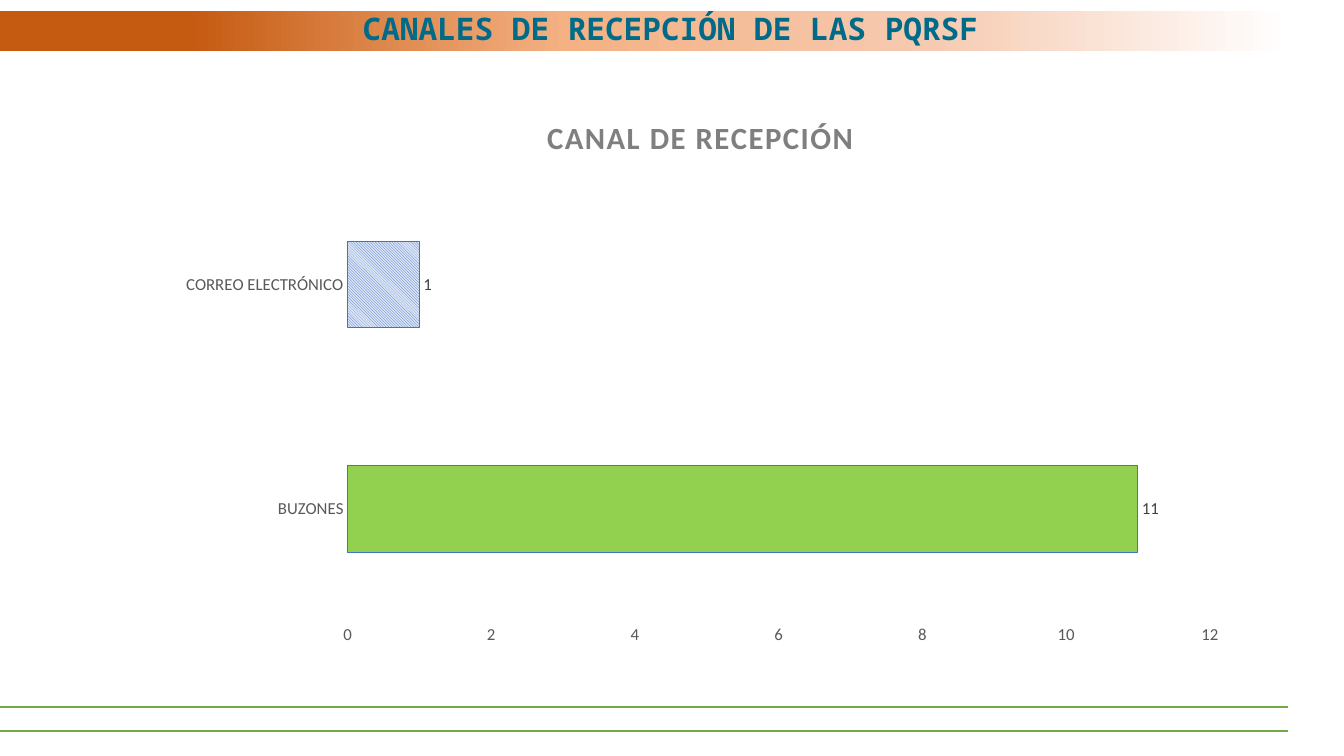
"""Build the slide on the reception channels of the PQRSF."""
from dataclasses import dataclass

from lxml.etree import SubElement
from pptx import Presentation
from pptx.chart.data import CategoryChartData
from pptx.dml.color import RGBColor
from pptx.enum.chart import XL_CHART_TYPE, XL_LABEL_POSITION, XL_TICK_MARK
from pptx.enum.dml import MSO_PATTERN
from pptx.enum.shapes import MSO_CONNECTOR, MSO_SHAPE
from pptx.enum.text import MSO_ANCHOR, PP_ALIGN
from pptx.oxml import parse_xml
from pptx.oxml.ns import nsdecls, qn
from pptx.util import Inches, Pt


@dataclass(frozen=True)
class Theme:
    heading_font: str = "Noto Sans Mono"
    chart_font: str = "Calibri"
    heading: str = "006B89"
    chart_title: str = "7F7F7F"
    axis: str = "595959"
    label: str = "404040"
    rule: str = "70AD47"
    mailbox: str = "92D050"
    bar: str = "4472C4"
    bar_light: str = "DAE3F3"
    band: tuple = ((14, "C55A11"), (42, "F4B183"), (69, "F6CAB1"), (96, "FFFFFF"))
    heading_size: float = 22.2
    chart_title_size: float = 22
    label_size: float = 12


def style_font(font, name, size, color, bold=False):
    values = {"name": name, "size": Pt(size), "bold": bold}
    for attribute, value in values.items():
        setattr(font, attribute, value)
    font.color.rgb = RGBColor.from_string(color)


def manual_layout(position, inner=False):
    target = '<c:layoutTarget val="inner"/>' if inner else ""
    modes = "".join(f'<c:{axis}Mode val="edge"/>' for axis in "xy")
    values = "".join(f'<c:{key} val="{value}"/>' for key, value in position.items())
    return parse_xml(
        f'<c:layout {nsdecls("c")}><c:manualLayout>{target}{modes}{values}'
        "</c:manualLayout></c:layout>"
    )


theme = Theme()
presentation = Presentation()
presentation.slide_width = Inches(13.33)
presentation.slide_height = Inches(7.5)
slide = presentation.slides.add_slide(presentation.slide_layouts[5])

band = slide.shapes.add_shape(
    MSO_SHAPE.RECTANGLE, Inches(0), Inches(0.11), Inches(13.33), Inches(0.4)
)
band.shadow.inherit = False
band.line.fill.background()
band.fill.gradient()
band.fill.gradient_angle = 0
stops = band.element.spPr.find(qn("a:gradFill")).find(qn("a:gsLst"))
stops.clear()
for percent, color in theme.band:
    stop = SubElement(stops, qn("a:gs"), pos=str(percent * 1000))
    SubElement(stop, qn("a:srgbClr"), val=color)

for top in (7.01, 7.25):
    rule = slide.shapes.add_connector(
        MSO_CONNECTOR.STRAIGHT, Inches(12.77), Inches(top), Inches(0), Inches(top)
    )
    rule.line.color.rgb = RGBColor.from_string(theme.rule)
    rule.line.width = Pt(1.5)
    SubElement(rule.element.spPr, qn("a:effectLst"))

title = slide.shapes.title
title_place = {"left": 0.42, "top": 0.11, "width": 12.46, "height": 0.4}
for attribute, value in title_place.items():
    setattr(title, attribute, Inches(value))
title.text_frame.text = "CANALES DE RECEPCIÓN DE LAS PQRSF"
title.text_frame.vertical_anchor = MSO_ANCHOR.MIDDLE
paragraph = title.text_frame.paragraphs[0]
paragraph_format = {"alignment": PP_ALIGN.CENTER, "line_spacing": 0.8, "space_before": Pt(0)}
for attribute, value in paragraph_format.items():
    setattr(paragraph, attribute, value)
style_font(paragraph.runs[0].font, theme.heading_font, theme.heading_size, theme.heading, True)
band.element.addnext(title.element)

chart_data = CategoryChartData()
chart_data.categories = ["BUZONES", "CORREO ELECTRÓNICO"]
chart_data.add_series("Series 1", (11, 1))
chart = slide.shapes.add_chart(
    XL_CHART_TYPE.BAR_CLUSTERED,
    Inches(1.63), Inches(0.87), Inches(10.69), Inches(5.63), chart_data,
).chart
chart.has_legend = False
style_font(chart.font, theme.chart_font, 10, "000000")

chart.has_title = True
chart_title = chart.chart_title
chart_title.text_frame.text = "CANAL DE RECEPCIÓN"
title_font = chart_title.text_frame.paragraphs[0].runs[0].font
style_font(
    title_font, theme.chart_font, theme.chart_title_size, theme.chart_title, True
)
chart_title.text_frame.paragraphs[0].runs[0]._r.get_or_add_rPr().set("spc", "120")
chart_title.include_in_layout = False
title_element = chart_title._element
for layout in title_element.findall(qn("c:layout")):
    title_element.remove(layout)
title_element.find(qn("c:tx")).addnext(manual_layout({"x": 0.35, "y": 0.04}))

plot_area = chart._chartSpace.chart.plotArea
for layout in plot_area.findall(qn("c:layout")):
    plot_area.remove(layout)
plot_area.insert(0, manual_layout({"x": 0.17, "y": 0.15, "w": 0.8, "h": 0.79}, True))

for axis in (chart.category_axis, chart.value_axis):
    axis_format = {
        "has_major_gridlines": False,
        "major_tick_mark": XL_TICK_MARK.NONE,
        "minor_tick_mark": XL_TICK_MARK.NONE,
    }
    for attribute, value in axis_format.items():
        setattr(axis, attribute, value)
    axis.format.line.fill.background()
    style_font(axis.tick_labels.font, theme.chart_font, theme.label_size, theme.axis)
value_scale = {"minimum_scale": 0, "maximum_scale": 12, "major_unit": 2}
for attribute, value in value_scale.items():
    setattr(chart.value_axis, attribute, value)

plot = chart.plots[0]
plot.gap_width = 160
plot.vary_by_categories = False
series = plot.series[0]
mailbox = series.points[0]
for bar in (series, mailbox):
    bar.format.line.color.rgb = RGBColor.from_string(theme.bar)
    bar.format.line.width = Pt(0.75)
series.format.fill.patterned()
series.format.fill.pattern = MSO_PATTERN.LIGHT_DOWNWARD_DIAGONAL
series.format.fill.fore_color.rgb = RGBColor.from_string(theme.bar)
series.format.fill.back_color.rgb = RGBColor.from_string(theme.bar_light)
mailbox.format.fill.solid()
mailbox.format.fill.fore_color.rgb = RGBColor.from_string(theme.mailbox)

labels = series.data_labels
labels.show_value = True
labels.position = XL_LABEL_POSITION.OUTSIDE_END
style_font(labels.font, theme.chart_font, theme.label_size, theme.label)

presentation.save("out.pptx")
